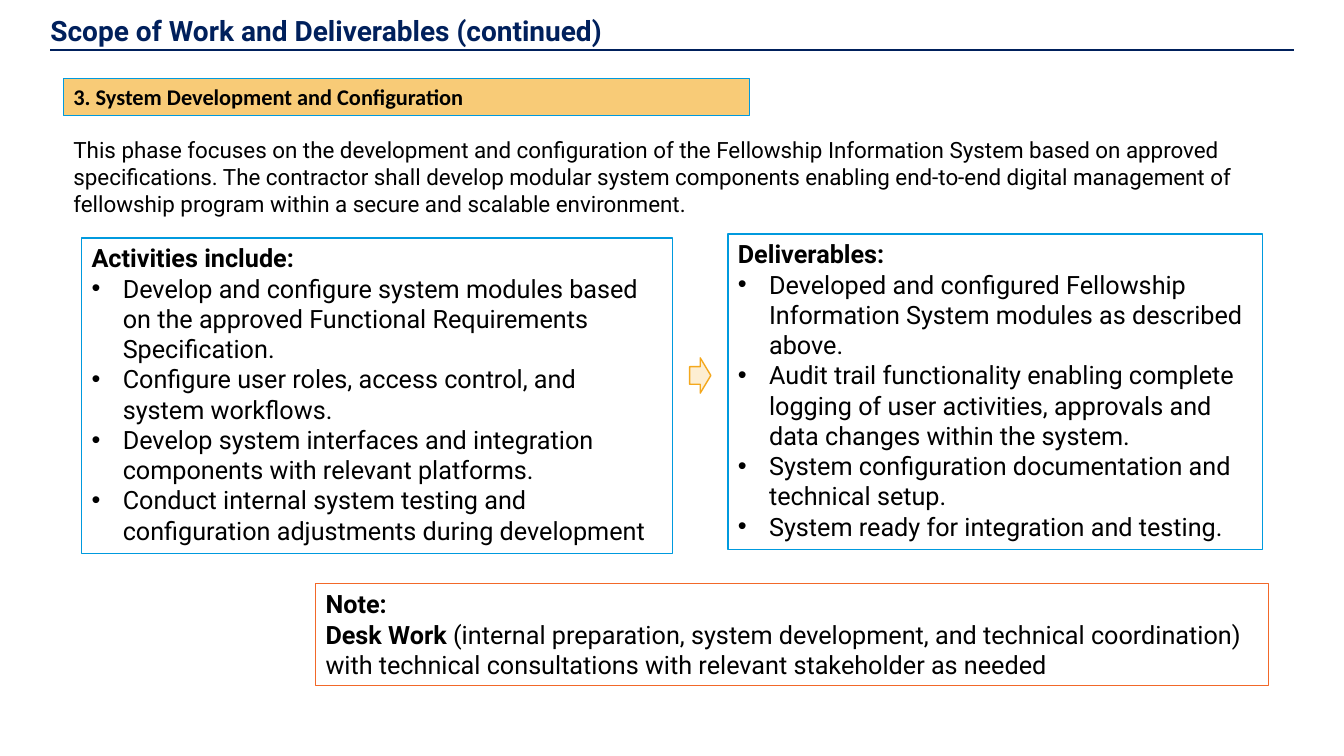
"""Build the system development and configuration slide."""
from lxml import etree
from pptx import Presentation
from pptx.dml.color import RGBColor
from pptx.enum import shapes, text
from pptx.oxml import ns
from pptx.util import Inches, Pt

NAVY = RGBColor(0x00, 0x20, 0x5C)
BLUE = RGBColor(0x00, 0x9A, 0xDE)
GOLD = RGBColor(0xF8, 0xCB, 0x77)
AMBER = RGBColor(0xF4, 0xA8, 0x1D)
CREAM = RGBColor(0xFD, 0xEE, 0xD2)
ORANGE = RGBColor(0xF2, 0x68, 0x29)
BLACK = RGBColor(0x00, 0x00, 0x00)
WHITE = RGBColor(0xFF, 0xFF, 0xFF)

ACTIVITIES = [
    "Develop and configure system modules based on the approved Functional Requirements Specification.",
    "Configure user roles, access control, and system workflows.",
    "Develop system interfaces and integration components with relevant platforms.",
    "Conduct internal system testing and configuration adjustments during development",
]
DELIVERABLES = [
    "Developed and configured Fellowship Information System modules as described above.",
    "Audit trail functionality enabling complete logging of user activities, approvals and "
    "data changes within the system.",
    "System configuration documentation and technical setup.",
    "System ready for integration and testing.",
]
INTRO = (
    "This phase focuses on the development and configuration of the Fellowship Information System "
    "based on approved specifications. The contractor shall develop modular system components "
    "enabling end-to-end digital management of fellowship program within a secure and scalable "
    "environment."
)
NOTE = (
    "(internal preparation, system development, and technical coordination) "
    "with technical consultations with relevant stakeholder as needed"
)


class SlideBuilder:
    """Hold the text style and the current slide."""

    def __init__(self, slide, font="Roboto", size=18):
        self.slide = slide
        self.font = font
        self.size = size

    def rule(self, left, right, top, color):
        """Draw a horizontal line."""
        line = self.slide.shapes.add_connector(
            shapes.MSO_CONNECTOR.STRAIGHT, Inches(left), Inches(top), Inches(right), Inches(top))
        line.line.color.rgb = color
        line.line.width = Pt(1.5)
        etree.SubElement(line._element.spPr, ns.qn("a:effectLst"))

    def shape(self, kind, area, fill, outline, width=1):
        """Draw a filled and outlined preset shape."""
        drawn = self.slide.shapes.add_shape(kind, *map(Inches, area))
        drawn.shadow.inherit = False
        drawn.fill.solid()
        drawn.fill.fore_color.rgb = fill
        drawn.line.color.rgb = outline
        drawn.line.width = Pt(width)
        return drawn

    def panel(self, area, outline, fill=WHITE, width=1):
        """Draw a rectangle and return its text frame."""
        frame = self.shape(shapes.MSO_SHAPE.RECTANGLE, area, fill, outline, width).text_frame
        return self.prepare(frame)

    def text_box(self, area):
        """Add a text box and return its text frame."""
        return self.prepare(self.slide.shapes.add_textbox(*map(Inches, area)).text_frame)

    def prepare(self, frame):
        """Wrap the text and start it at the top left."""
        frame.word_wrap = True
        frame.vertical_anchor = text.MSO_ANCHOR.TOP
        frame.paragraphs[0].alignment = text.PP_ALIGN.LEFT
        return frame

    def next_line(self, frame):
        """Add a left-aligned paragraph."""
        paragraph = frame.add_paragraph()
        paragraph.alignment = text.PP_ALIGN.LEFT
        return paragraph

    def add_words(self, paragraph, words, bold=False, size=None, font=None, color=BLACK):
        """Add one run to a paragraph."""
        run = paragraph.add_run()
        run.text = words
        run.font.name = font or self.font
        run.font.size = Pt(size or self.size)
        run.font.bold = bold
        run.font.color.rgb = color

    def bullet_panel(self, area, heading, items):
        """Draw a panel with a heading above a bulleted list."""
        frame = self.panel(area, BLUE)
        self.add_words(frame.paragraphs[0], heading, bold=True)
        for item in items:
            paragraph = self.next_line(frame)
            properties = paragraph._p.get_or_add_pPr()
            properties.set("marL", str(Inches(0.31)))
            properties.set("indent", str(-Inches(0.31)))
            etree.SubElement(properties, ns.qn("a:buFont"), typeface="Arial")
            etree.SubElement(properties, ns.qn("a:buChar"), char="•")
            self.add_words(paragraph, item)


def main():
    """Compose and save the slide."""
    deck = Presentation()
    deck.slide_width = Inches(13.33)
    deck.slide_height = Inches(7.5)
    builder = SlideBuilder(deck.slides.add_slide(deck.slide_layouts[6]))

    builder.rule(0.5, 12.83, 0.5, NAVY)
    title = builder.text_box((0.5, 0.17, 12.33, 0.47))
    title.margin_left = title.margin_right = title.margin_top = title.margin_bottom = 0
    title.paragraphs[0].line_spacing = 0.9
    builder.add_words(title.paragraphs[0], "Scope of Work and Deliverables (continued)",
                      bold=True, size=20, color=NAVY)

    phase = builder.panel((0.63, 0.78, 6.8, 0.37), BLUE, GOLD, 0.75)
    builder.add_words(phase.paragraphs[0], "3. System Development and Configuration",
                      bold=True, size=16, font="Calibri")

    intro = builder.text_box((0.63, 1.3, 11.94, 0.91))
    builder.add_words(intro.paragraphs[0], INTRO, size=16)

    builder.bullet_panel((7.22, 2.32, 5.3, 3.13), "Deliverables:", DELIVERABLES)
    builder.shape(shapes.MSO_SHAPE.RIGHT_ARROW, (6.84, 3.55, 0.21, 0.35), CREAM, AMBER)
    builder.bullet_panel((0.81, 2.36, 5.86, 3.13), "Activities include:", ACTIVITIES)

    note = builder.panel((3.13, 5.79, 9.45, 1.01), ORANGE)
    builder.add_words(note.paragraphs[0], "Note:", bold=True)
    desk_work = builder.next_line(note)
    builder.add_words(desk_work, "Desk Work ", bold=True)
    builder.add_words(desk_work, NOTE)

    deck.save("out.pptx")


if __name__ == "__main__":
    main()
